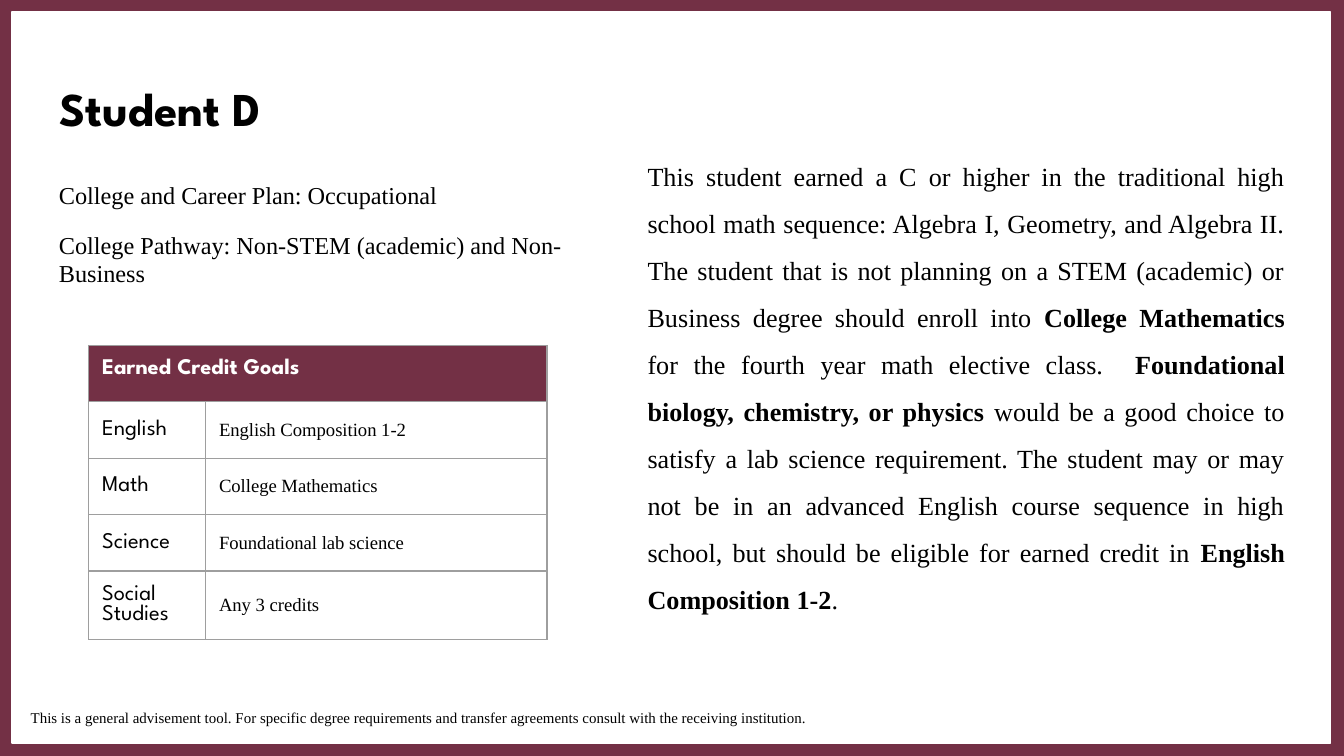
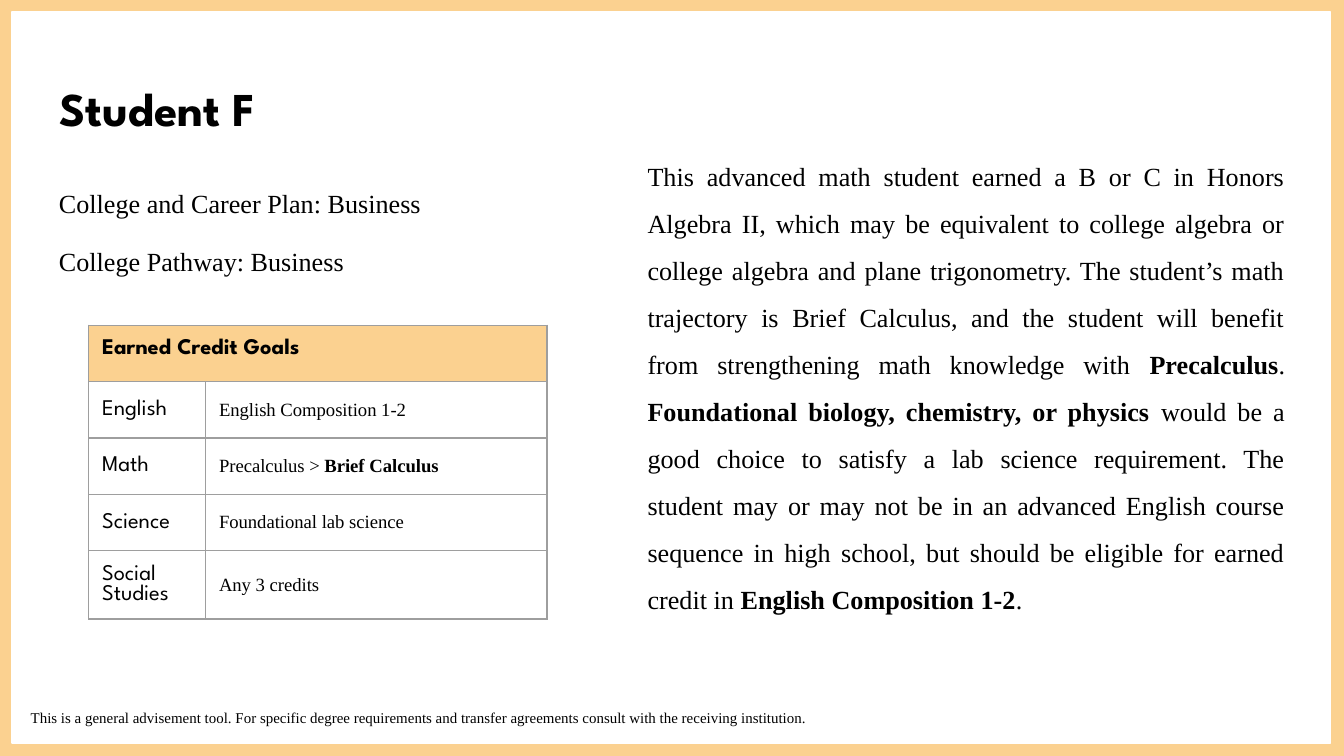
import pptx
import pptx.dml.color
import pptx.enum.shapes
import pptx.enum.text
import pptx.oxml
import pptx.oxml.ns
import pptx.util
from pptx.util import Inches

ANCHOR = pptx.enum.text.MSO_ANCHOR
ALIGN = pptx.enum.text.PP_ALIGN
HEADING_FONT = "League Spartan"
BODY_FONT = "Times New Roman"
BLACK, WHITE, GRID = "000000", "FFFFFF", "9E9E9E"
INSET = Inches(0.1)
DISCLAIMER = ("This is a general advisement tool. For specific degree requirements "
              "and transfer agreements consult with the receiving institution.")
SCIENCE_AND_ENGLISH = (
    "**Foundational biology, chemistry, or physics** would be a good choice to satisfy "
    "a lab science requirement. The student may or may not be in an advanced English "
    "course sequence in high school, but should be eligible for earned credit in "
    "**English Composition 1-2**.")

STUDENTS = [
    dict(
        name="Student D", accent="733045", header_color=WHITE,
        plan=["College and Career Plan: Occupational",
              "College Pathway: Non-STEM (academic) and Non-Business"],
        plan_size=12.95, plan_spacing=0.95, goals_top=2.57, math="College Mathematics",
        advice="This student earned a C or higher in the traditional high school math "
               "sequence: Algebra I, Geometry, and Algebra II. The student that is not "
               "planning on a STEM (academic) or Business degree should enroll into "
               "**College Mathematics** for the fourth year math elective class.  "),
    dict(
        name="Student F", accent="FBD190", header_color=BLACK,
        plan=["College and Career Plan: Business", "College Pathway: Business"],
        plan_size=14, plan_spacing=1.15, goals_top=2.42,
        math="Precalculus > **Brief Calculus**",
        advice="This advanced math student earned a B or C in Honors Algebra II, which "
               "may be equivalent to college algebra or college algebra and plane "
               "trigonometry. The student’s math trajectory is Brief Calculus, and the "
               "student will benefit from strengthening math knowledge with "
               "**Precalculus**. "),
]


def rgb(value):
    return pptx.dml.color.RGBColor.from_string(value)


def fill_solid(fill, color):
    fill.solid()
    fill.fore_color.rgb = rgb(color)


def write(paragraph, text, size, font=BODY_FONT, color=BLACK, bold=False):
    """Write text into a paragraph; parts between ** marks are bold."""
    parts = text.split("**")
    for index, part in enumerate(parts):
        if part:
            run = paragraph.add_run()
            run.text = part
            if len(parts) > 1:
                run.font.bold = index % 2 == 1
    paragraph.font.size = pptx.util.Pt(size)
    paragraph.font.name = font
    paragraph.font.color.rgb = rgb(color)
    if len(parts) == 1:
        paragraph.font.bold = bold


def set_borders(cell, color, width=0.75):
    properties = cell._tc.get_or_add_tcPr()
    for index, side in enumerate(("lnL", "lnR", "lnT", "lnB")):
        properties.insert(index, pptx.oxml.parse_xml(
            f'<a:{side} {pptx.oxml.ns.nsdecls("a")} w="{pptx.util.Pt(width)}">'
            f'<a:solidFill><a:srgbClr val="{color}"/></a:solidFill></a:{side}>'))


class StudentDeck:
    def __init__(self):
        self.presentation = pptx.Presentation()
        self.presentation.slide_width = Inches(10)
        self.presentation.slide_height = Inches(10) * 9 // 16
        self.slide = None
        self.accent = None

    def start_slide(self, accent):
        """Add a slide with a white panel framed by the accent colour."""
        self.accent = accent
        self.slide = self.presentation.slides.add_slide(
            self.presentation.slide_layouts[5])
        fill_solid(self.slide.background.fill, accent)
        panel = self.slide.shapes.add_shape(
            pptx.enum.shapes.MSO_SHAPE.RECTANGLE,
            Inches(0.09), Inches(0.09), Inches(9.81), Inches(5.44))
        panel.shadow.inherit = False
        fill_solid(panel.fill, WHITE)
        panel.line.color.rgb = rgb(WHITE)
        panel.line.width = pptx.util.Pt(0.75)
        self.slide.shapes._spTree.insert(2, panel._element)  # behind the title

    def prepare_frame(self, frame, anchor=ANCHOR.TOP):
        frame.word_wrap = True
        frame.auto_size = pptx.enum.text.MSO_AUTO_SIZE.NONE
        frame.vertical_anchor = anchor
        frame.margin_left = frame.margin_right = INSET
        frame.margin_top = frame.margin_bottom = INSET

    def title(self, text):
        title = self.slide.shapes.title
        title.left, title.top = Inches(0.34), Inches(0.49)
        title.width, title.height = Inches(4.05), Inches(0.63)
        self.prepare_frame(title.text_frame)
        paragraph = title.text_frame.paragraphs[0]
        paragraph.alignment = ALIGN.LEFT
        write(paragraph, text, 25.2, HEADING_FONT, bold=True)

    def text(self, left, top, width, height, lines, size, spacing=None,
             align=ALIGN.LEFT, anchor=ANCHOR.TOP):
        box = self.slide.shapes.add_textbox(
            Inches(left), Inches(top), Inches(width), Inches(height))
        frame = box.text_frame
        self.prepare_frame(frame, anchor)
        for index, line in enumerate(lines):
            paragraph = frame.add_paragraph() if index else frame.paragraphs[0]
            paragraph.alignment = align
            if spacing:
                paragraph.line_spacing = spacing
            if index:
                paragraph.space_before = pptx.util.Pt(12)
            write(paragraph, line, size)

    def goals_table(self, top, header, header_color, goals):
        widths, row_height = (0.87, 2.54), 0.42
        table = self.slide.shapes.add_table(
            len(goals) + 1, 2, Inches(0.66), Inches(top),
            Inches(sum(widths)), Inches(row_height * (len(goals) + 1))).table
        table.first_row = table.horz_banding = False
        for column, width in zip(table.columns, widths):
            column.width = Inches(width)
        for row in table.rows:
            row.height = Inches(row_height)
        for cell in table.iter_cells():
            cell.margin_left = cell.margin_right = INSET
            cell.margin_top = cell.margin_bottom = INSET
            cell.vertical_anchor = ANCHOR.MIDDLE
            fill_solid(cell.fill, WHITE)
            set_borders(cell, GRID)
        heading = table.cell(0, 0)
        heading.merge(table.cell(0, 1))
        heading.vertical_anchor = ANCHOR.TOP
        fill_solid(heading.fill, self.accent)
        write(heading.text_frame.paragraphs[0], header, 12, HEADING_FONT,
              header_color, bold=True)
        for row, (subject, goal) in enumerate(goals, start=1):
            write(table.cell(row, 0).text_frame.paragraphs[0], subject, 12, HEADING_FONT)
            write(table.cell(row, 1).text_frame.paragraphs[0], goal, 10)

    def student(self, name, accent, header_color, plan, plan_size, plan_spacing,
                goals_top, math, advice):
        self.start_slide(accent)
        self.title(name)
        self.text(0.34, 1.26, 4.05, 1.16, plan, plan_size, plan_spacing)
        self.text(4.72, 0.44, 4.94, 4.77, [advice + SCIENCE_AND_ENGLISH], 14, 1.5,
                  ALIGN.JUSTIFY, ANCHOR.MIDDLE)
        self.goals_table(goals_top, "Earned Credit Goals", header_color, [
            ("English", "English Composition 1-2"),
            ("Math", math),
            ("Science", "Foundational lab science"),
            ("Social Studies", "Any 3 credits"),
        ])
        self.text(0.13, 5.17, 9.73, 0.29, [DISCLAIMER], 8)


def main():
    deck = StudentDeck()
    for student in STUDENTS:
        deck.student(**student)
    deck.presentation.save("out.pptx")


if __name__ == "__main__":
    main()
